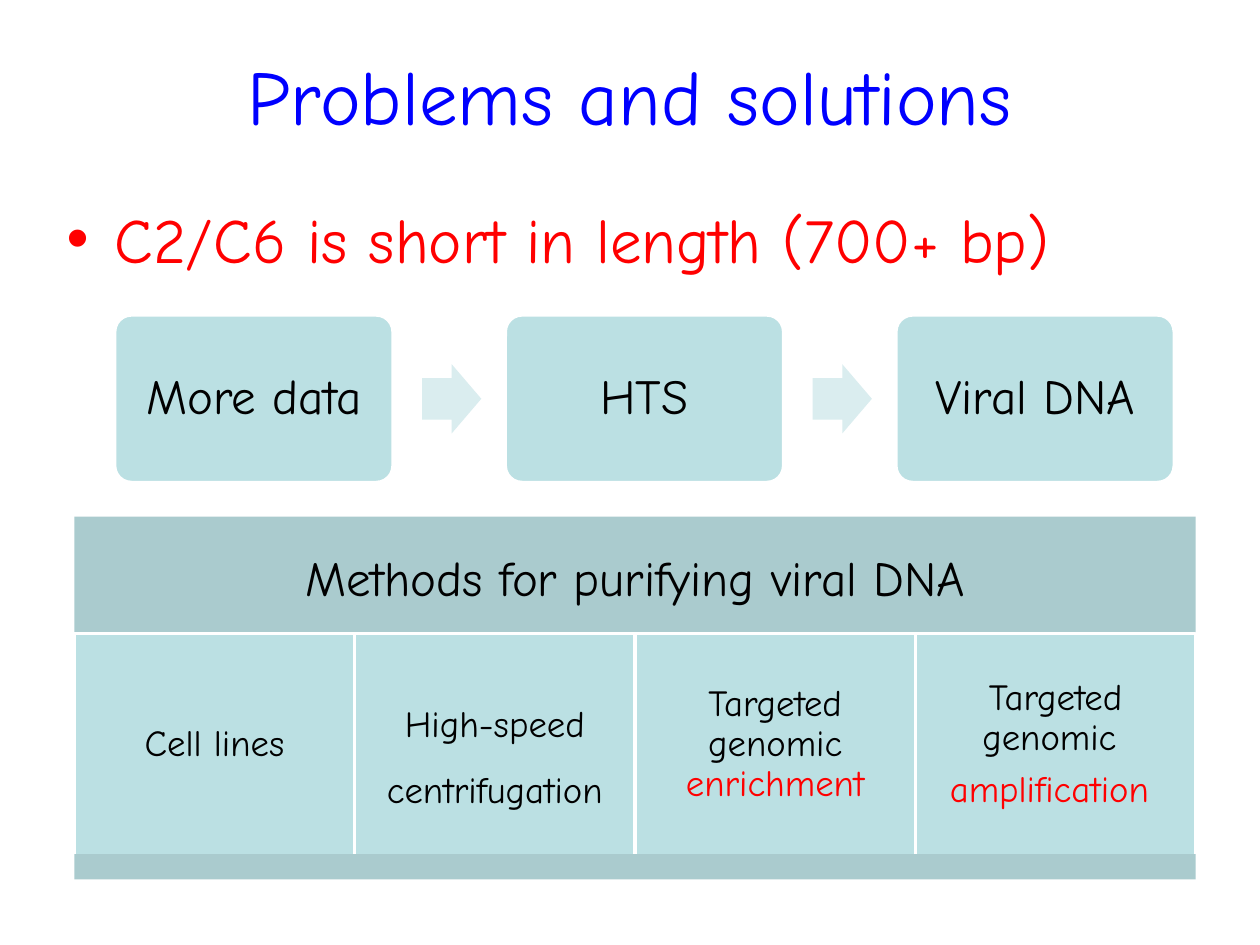
from lxml import etree
from pptx import Presentation
from pptx.dml.color import RGBColor
from pptx.enum.shapes import MSO_SHAPE
from pptx.enum.text import MSO_ANCHOR, MSO_AUTO_SIZE, PP_ALIGN
from pptx.oxml.ns import qn
from pptx.util import Inches, Pt

FONT = "Comic Neue"
BLUE = RGBColor(0x00, 0x00, 0xFF)
RED = RGBColor(0xFF, 0x00, 0x00)
BLACK = RGBColor(0x00, 0x00, 0x00)
WHITE = RGBColor(0xFF, 0xFF, 0xFF)
TEAL = RGBColor(0xBB, 0xE0, 0xE3)
DARK_TEAL = RGBColor(0xAA, 0xCB, 0xCE)
PALE_TEAL = RGBColor(0xDA, 0xED, 0xEF)
RECT = MSO_SHAPE.RECTANGLE
ROUNDED = MSO_SHAPE.ROUNDED_RECTANGLE
ARROW = MSO_SHAPE.RIGHT_ARROW
MIDDLE = MSO_ANCHOR.MIDDLE
NO_AUTOFIT = MSO_AUTO_SIZE.NONE
CENTER = PP_ALIGN.CENTER
LEFT = PP_ALIGN.LEFT

prs = Presentation()
prs.slide_width, prs.slide_height = Inches(10), Inches(7.5)
slide = prs.slides.add_slide(prs.slide_layouts[5])


def add_block(kind, left, top, width, height, fill, outlined=False):
    block = slide.shapes.add_shape(
        kind, Inches(left), Inches(top), Inches(width), Inches(height))
    block.shadow.inherit = False
    block.fill.solid()
    block.fill.fore_color.rgb = fill
    if outlined:
        block.line.color.rgb = WHITE
        block.line.width = Pt(2)
    else:
        block.line.fill.background()
    return block


def write(frame, paragraphs, size, spacing=0.9, inset=None, align=CENTER):
    """Fill a text frame; each paragraph is a list of (text, color) runs."""
    frame.word_wrap = True
    frame.auto_size = NO_AUTOFIT
    if inset is not None:
        frame.vertical_anchor = MIDDLE
        frame.margin_left = frame.margin_right = Inches(inset)
        frame.margin_top = frame.margin_bottom = Inches(inset)
    for i, runs in enumerate(paragraphs):
        paragraph = frame.add_paragraph() if i else frame.paragraphs[0]
        paragraph.alignment = align
        paragraph.line_spacing = spacing
        if inset is not None:
            paragraph.space_after = Pt(round(size * 0.35, 2))
        for text, color in runs:
            run = paragraph.add_run()
            run.text = text
            run.font.name = FONT
            run.font.size = Pt(size)
            run.font.color.rgb = color


# Title
title = slide.shapes.title
title.left, title.top = Inches(0.75), Inches(0.05)
title.width, title.height = Inches(8.5), Inches(1.25)
title.text_frame.vertical_anchor = MIDDLE
write(title.text_frame, [[("Problems and solutions", BLUE)]], 44, 1.2)

# Problem statement with a bullet
problem = slide.shapes.add_textbox(
    Inches(0.43), Inches(1.39), Inches(9.06), Inches(0.94)).text_frame
write(problem, [[("C2/C6 is short in length (700+ bp)", RED)]], 36, 1.25, align=LEFT)
problem.paragraphs[0].space_before = Pt(7.2)
bullet_props = problem.paragraphs[0]._p.get_or_add_pPr()
bullet_props.set("marL", str(Inches(0.38)))
bullet_props.set("indent", str(-Inches(0.38)))
etree.SubElement(bullet_props, qn("a:buFont")).set("typeface", "Arial")
etree.SubElement(bullet_props, qn("a:buChar")).set("char", "•")

# Methods panel: header, four methods, footer band
PANEL_LEFT, PANEL_WIDTH = 0.59, 8.9
header = add_block(RECT, PANEL_LEFT, 4.1, PANEL_WIDTH, 1.02, DARK_TEAL)
write(header.text_frame, [[("Methods for purifying viral DNA", BLACK)]], 28, inset=0.12)

methods = [
    ([[("Cell lines", BLACK)]], 0.9),
    ([[("High-speed centrifugation", BLACK)]], 1.5),
    ([[("Targeted genomic ", BLACK), ("enrichment", RED)]], 0.9),
    ([[("Targeted genomic ", BLACK)], [("amplification ", RED)]], 0.9),
]
method_width = PANEL_WIDTH / len(methods)
for i, (paragraphs, spacing) in enumerate(methods):
    method = add_block(RECT, PANEL_LEFT + i * method_width, 5.03,
                       method_width, 1.76, TEAL, outlined=True)
    write(method.text_frame, paragraphs, 21, spacing, inset=0.09)

add_block(RECT, PANEL_LEFT, 6.78, PANEL_WIDTH, 0.2, DARK_TEAL)

# Process: three steps joined by arrows
STEP_LEFT, STEP_PITCH = 0.91, 3.1
steps = ["More data", "HTS", "Viral DNA"]
for i, name in enumerate(steps):
    left = STEP_LEFT + i * STEP_PITCH
    step = add_block(ROUNDED, left, 2.5, 2.21, 1.33, TEAL, outlined=True)
    step.adjustments[0] = 0.1
    write(step.text_frame, [[(name, BLACK)]], 28, inset=0.12)
    if i < len(steps) - 1:
        arrow = add_block(ARROW, left + 2.44, 2.89, 0.47, 0.55, PALE_TEAL)
        arrow.adjustments[0] = 0.6
        arrow.adjustments[1] = 0.5

prs.save("out.pptx")
